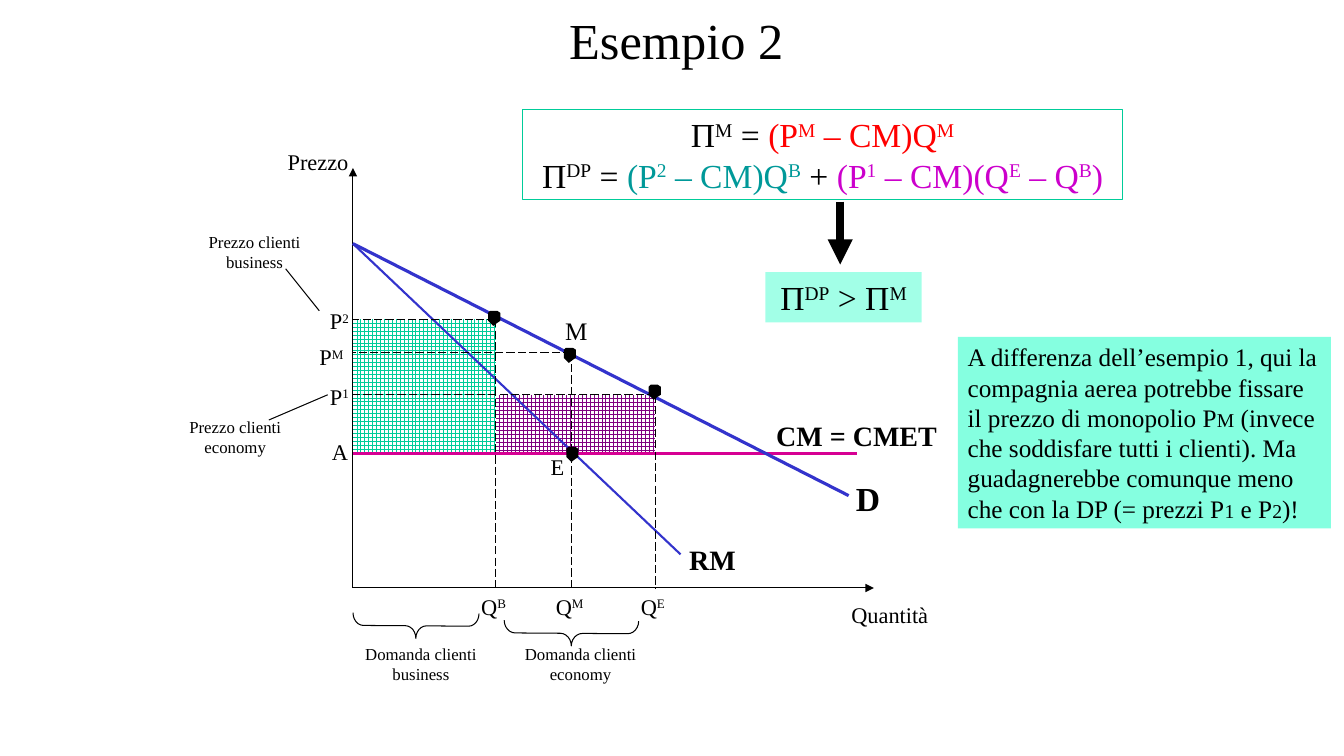
from pptx import Presentation
from pptx.dml.color import RGBColor
from pptx.enum.dml import MSO_LINE as Dash, MSO_PATTERN as Pat
from pptx.enum.shapes import MSO_CONNECTOR as Link, MSO_SHAPE as Kind
from pptx.enum.text import PP_ALIGN as Align, MSO_ANCHOR as Anchor
from pptx.oxml.ns import qn
from pptx.util import Inches, Pt
from lxml.etree import SubElement as Sub

# Grid: 160 columns by 90 rows, 12 to the inch
CELL = Inches(1) / 12
BLACK, BLUE, PINK = "000000", "3333CC", "D60093"
TEAL, RED, CYAN, PURPLE = "00CC99", "FF0000", "009999", "CC00CC"

# Key columns and rows of the chart
LEFT, BASE, COST, TOP = 42, 70, 54, 29
QB, QM, QE = 59, 68, 78
P2, PM, P1 = 38, 42, 47

# Profit areas: left, top, right, bottom, colour
AREAS = [(LEFT, P2, QB, COST, TEAL), (QB, P1, QE, COST, "800080")]

# Lines: from, to, colour, weight, style
LINES = [
    (LEFT, BASE, LEFT, 20, BLACK, 0.75, "arrow"),
    (LEFT, BASE, 104, BASE, BLACK, 0.75, "arrow"),
    (LEFT, COST, 102, COST, PINK, 2.25, ""),
    (LEFT, TOP, 101, 59, BLUE, 2.25, ""),
    (LEFT, TOP, 81, 66, BLUE, 1.5, ""),
    (38, 37, 34, 32, BLACK, 0.75, ""),
    (39, 47, 32, 50, BLACK, 0.75, ""),
    (100, 24, 100, 31.5, BLACK, 6, "arrow"),
]
for col, row in [(QB, P2), (QM, PM), (QE, P1)]:
    LINES += [(col, row, col, BASE, BLACK, 0.75, "dash"),
              (col, row, LEFT, row, BLACK, 0.75, "dash")]

# Labels: text, column, row, width, size, bold; | toggles superscript
LABELS = [
    ("Esempio 2", 16.8, 0.5, 127.4, 36, False),
    ("P|2", 38, 36, 4.8, 16, False),
    ("P|M", 36.7, 40.3, 5.5, 16, False),
    ("P|1", 38, 45, 4.8, 16, False),
    ("A", 38.3, 51.6, 4.3, 16, False),
    ("Q|B", 56, 70, 5.5, 16, False),
    ("Q|M", 64.8, 70, 6, 16, False),
    ("Q|E", 75, 70, 5.4, 16, False),
    ("M", 66, 37, 5.2, 18, False),
    ("E", 64.3, 53.3, 4.1, 16, False),
    ("RM", 80.8, 64, 8, 20, True),
    ("D", 100.6, 56.3, 5.4, 24, True),
    ("CM = CMET", 91.1, 49.2, 21.7, 20, True),
    ("Prezzo", 33, 17, 9.7, 16, False),
    ("Quantità", 100, 71, 11.8, 16, False),
    ("Prezzo clienti\nbusiness", 23.3, 27, 14, 12, False),
    ("Prezzo clienti\neconomy", 20, 49, 16, 12, False),
    ("Domanda clienti\nbusiness", 42, 76, 16.2, 12, False),
    ("Domanda clienti\neconomy", 61, 76, 16.2, 12, False),
]

# Boxes: paragraphs of (text, colour) pieces
PROFIT = [
    [("Π|M| = ", BLACK), ("(P|M| – CM)Q|M", RED)],
    [("Π|DP| = ", BLACK), ("(P|2| – CM)Q|B", CYAN), (" + ", BLACK),
     ("(P|1| – CM)(Q|E| – Q|B|)", PURPLE)],
]
RESULT = [[("Π|DP| > Π|M", BLACK)]]
NOTE = [[("A differenza dell’esempio 1, qui la compagnia aerea potrebbe "
          "fissare il prezzo di monopolio P|M| (invece che soddisfare tutti "
          "i clienti). Ma guadagnerebbe comunque meno che con la DP "
          "(= prezzi P|1| e P|2|)!", BLACK)]]

# Braces: column, row, width, height, bend
BRACES = [(66.5, 67.4, 3, 16, 0.444), (48, 67, 3, 15, 0.416)]

# Dots: column and row; outline in hundredths of an inch
DOTS = [(67.4, 53.2), (58.1, 37), (77.2, 45.8), (67.1, 41.4)]
RIM = [(5, 15), (9, 12), (12, 10), (12, 7), (12, 2), (9, 0),
       (5, 0), (2, 0), (0, 2), (0, 7), (0, 10), (2, 12)]

deck = Presentation()
deck.slide_width, deck.slide_height = Inches(13.33), Inches(7.5)
slide = deck.slides.add_slide(deck.slide_layouts[6])
shapes = slide.shapes


def grid(*cells):
    return [round(c * CELL) for c in cells]


def hue(code):
    return RGBColor.from_string(code)


def apply(item, **vals):
    for name, val in vals.items():
        setattr(item, name, val)


def paint(shape, fill=None, line=None):
    shape.shadow.inherit = False
    for part, code in ((shape.fill, fill), (shape.line.fill, line)):
        if code:
            part.solid()
            part.fore_color.rgb = hue(code)
        else:
            part.background()
    if line:
        shape.line.width = Pt(0.75)


def write(shape, paras, size, bold=False, align=Align.CENTER,
          wrap=False, small=None):
    frame = shape.text_frame
    apply(frame, word_wrap=wrap, vertical_anchor=Anchor.TOP)
    for i, pieces in enumerate(paras):
        para = frame.add_paragraph() if i else frame.paragraphs[0]
        para.alignment = align
        for text, code in pieces:
            for j, part in enumerate(text.split("|")):
                run = para.add_run()
                run.text = part
                raised = j % 2
                apply(run.font, name="Times New Roman", bold=bold,
                      size=Pt(small if raised and small else size))
                run.font.color.rgb = hue(code)
                if raised and not small:
                    run.font._element.set("baseline", "30000")


def tall(rows, size):
    return 1.2 + rows * size / 5


def box(paras, x, y, w, rows, size, fill=None, line=None, **style):
    shape = shapes.add_shape(Kind.RECTANGLE, *grid(x, y, w, tall(rows, size)))
    paint(shape, fill, line)
    write(shape, paras, size, **style)
    return shape


# Profit areas
for x, y, right, low, code in AREAS:
    area = shapes.add_shape(Kind.RECTANGLE, *grid(x, y, right - x, low - y))
    paint(area)
    area.fill.patterned()
    area.fill.pattern = Pat.LARGE_GRID
    area.fill.fore_color.rgb, area.fill.back_color.rgb = hue(code), hue("FFFFFF")

# Axes, curves, guides and pointers
for *ends, code, weight, style in LINES:
    link = shapes.add_connector(Link.STRAIGHT, *grid(*ends))
    link.line.width = Pt(weight)
    link.line.color.rgb = hue(code)
    if style == "dash":
        link.line.dash_style = Dash.LONG_DASH
    if style == "arrow":
        Sub(link.line._get_or_add_ln(), qn("a:tailEnd"), type="triangle")
    Sub(link._element.spPr, qn("a:effectLst"))

# Boxes
box(PROFIT, 62.2, 13, 71.4, 2, 24, line=TEAL)
result = box(RESULT, 91.1, 32.4, 18.6, 1, 24, fill="47FFD1")
tint = result._element.spPr.find(qn("a:solidFill"))[0]
Sub(tint, qn("a:alpha"), val="50000")
box(NOTE, 114, 40.1, 44.4, 6, 18, fill="85FFE0",
    align=Align.LEFT, wrap=True, small=14)

# Labels
for text, x, y, w, size, bold in LABELS:
    rows = [[(row, BLACK)] for row in text.split("\n")]
    label = shapes.add_textbox(*grid(x, y, w, tall(len(rows), size)))
    write(label, rows, size, bold)

# Braces
for *place, bend in BRACES:
    brace = shapes.add_shape(Kind.RIGHT_BRACE, *grid(*place))
    brace.adjustments[0] = bend
    brace.rotation = 90.4
    paint(brace, line=BLACK)

# Dots
for spot in DOTS:
    pen = shapes.build_freeform(*RIM[0], scale=Inches(0.01))
    pen.add_line_segments(RIM[1:], close=True)
    paint(pen.convert_to_shape(*grid(*spot)), fill=BLACK)

deck.save("out.pptx")
